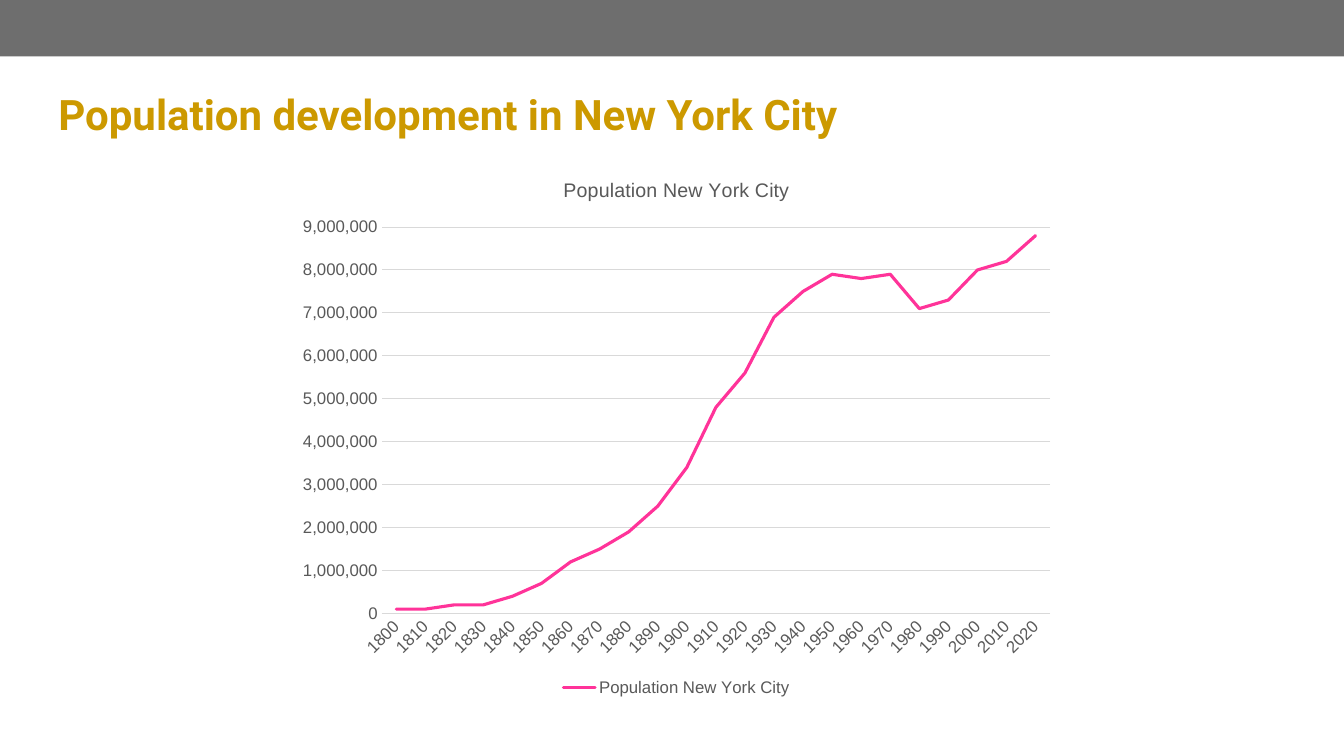
from dataclasses import dataclass

from pptx import Presentation, util as u
from pptx.chart.data import CategoryChartData
from pptx.dml.color import RGBColor
from pptx.enum import chart as ch, shapes, text


@dataclass(frozen=True)
class Theme:
    """Colours, fonts and type sizes of the deck."""
    bar: str = "6E6E6E"
    gold: str = "CC9900"
    pink: str = "FF3399"
    ink: str = "595959"
    grid: str = "D9D9D9"
    head: str = "Roboto"
    body: str = "Arial"
    big: int = 30
    mid: int = 14
    small: int = 12
    base: int = 10


T = Theme()
WIDE, HIGH = 13.33, 7.5
NAME = "Population New York City"
YEARS = [str(y) for y in range(1800, 2021, 10)]
MILLIONS = [0.1, 0.1, 0.2, 0.2, 0.4, 0.7, 1.2, 1.5, 1.9, 2.5, 3.4, 4.8,
            5.6, 6.9, 7.5, 7.9, 7.8, 7.9, 7.1, 7.3, 8.0, 8.2, 8.8]


def place(box):
    """Turn a box in inches into slide lengths."""
    return [u.Inches(v) for v in box]


def style(font, size, color=T.ink, face=T.body, bold=False):
    """Format a font."""
    font.size, font.name, font.bold = u.Pt(size), face, bold
    font.color.rgb = RGBColor.from_string(color)


def write(frame, words, **form):
    """Put formatted words in a text frame."""
    run = frame.paragraphs[0].add_run()
    run.text = words
    style(run.font, **form)


def rule(line, color, width):
    """Format a line."""
    line.color.rgb = RGBColor.from_string(color)
    line.width = u.Pt(width)


def banner(slide, box):
    """Draw the bar across the top."""
    bar = slide.shapes.add_shape(shapes.MSO_SHAPE.RECTANGLE, *place(box))
    bar.shadow.inherit = False
    bar.fill.solid()
    bar.fill.fore_color.rgb = RGBColor.from_string(T.bar)
    bar.line.fill.background()


def title(slide, box, words):
    """Write the slide title."""
    frame = slide.shapes.add_textbox(*place(box)).text_frame
    frame.word_wrap = True
    frame.vertical_anchor = text.MSO_ANCHOR.TOP
    write(frame, words, size=T.big, color=T.gold, face=T.head, bold=True)


def graph(slide, box):
    """Draw the population line chart."""
    data = CategoryChartData(number_format="#,##0")
    data.categories = YEARS
    data.add_series(NAME, [round(m * 1_000_000) for m in MILLIONS])
    chart = slide.shapes.add_chart(
        ch.XL_CHART_TYPE.LINE, *place(box), data).chart
    style(chart.font, T.base)
    chart.has_title = True
    write(chart.chart_title.text_frame, NAME, size=T.mid)
    chart.chart_title.include_in_layout = False
    chart.has_legend = True
    chart.legend.position = ch.XL_LEGEND_POSITION.BOTTOM
    chart.legend.include_in_layout = False
    style(chart.legend.font, T.small)

    cats, vals = chart.category_axis, chart.value_axis
    for axis in (cats, vals):
        axis.major_tick_mark = axis.minor_tick_mark = ch.XL_TICK_MARK.NONE
        style(axis.tick_labels.font, T.small)
        axis._element.txPr.bodyPr.set("rot", "-60000000")
    rule(cats.format.line, T.grid, 0.75)
    vals.maximum_scale = 9_000_000
    vals.tick_labels.number_format = "#,##0"
    vals.tick_labels.number_format_is_linked = False
    vals.format.line.fill.background()
    rule(vals.major_gridlines.format.line, T.grid, 0.75)

    plot = chart.plots[0]
    plot.vary_by_categories = False
    line = plot.series[0]
    line.smooth = False
    line.marker.style = ch.XL_MARKER_STYLE.NONE
    rule(line.format.line, T.pink, 2.25)
    line.format.line._get_or_add_ln().set("cap", "rnd")


def main():
    """Build and save the deck."""
    deck = Presentation()
    deck.slide_width, deck.slide_height = u.Inches(WIDE), u.Inches(HIGH)
    slide = deck.slides.add_slide(deck.slide_layouts[6])
    banner(slide, (0, 0, WIDE, 0.56))
    title(slide, (0.48, 0.83, 12.38, 1.1),
          "Population development in New York City")
    graph(slide, (2.85, 1.56, 7.72, 5.39))
    deck.save("out.pptx")


if __name__ == "__main__":
    main()
